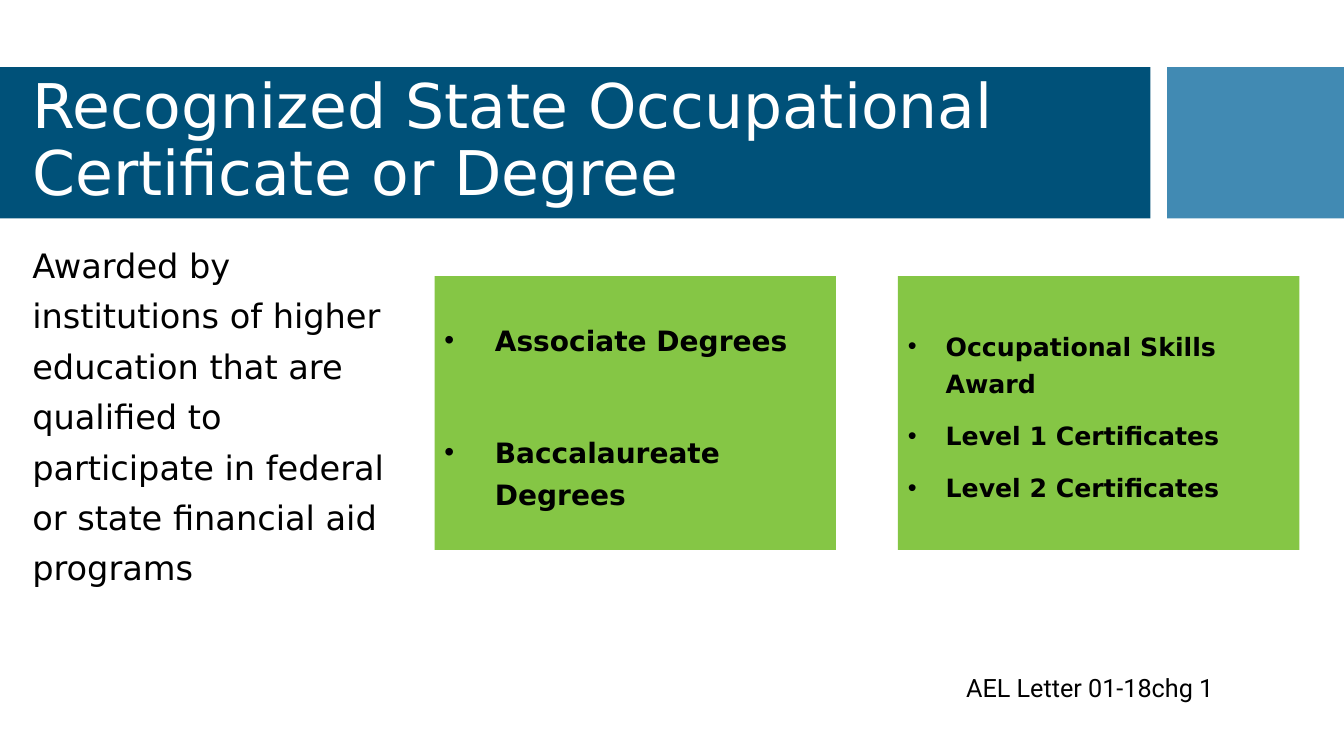
import pptx
import pptx.util
import pptx.dml.color
import pptx.enum.shapes
import pptx.enum.text
import pptx.oxml.ns
import lxml.etree

Pt = pptx.util.Pt
ANCHOR = pptx.enum.text.MSO_ANCHOR

COLORS = {"navy": "005179", "blue": "418AB3", "green": "85C645",
          "white": "FFFFFF", "black": "000000"}
FONT = "DejaVu Sans"

TITLE = "Recognized State Occupational Certificate or Degree"
INTRO = ("Awarded by institutions of higher education that are qualified "
         "to participate in federal or state financial aid programs")
LETTER = "AEL Letter 01-18chg 1"
CARDS = [
    {"items": ["Associate Degrees", "Baccalaureate Degrees"],
     "size": 20, "indent": 36, "gap": 50},
    {"items": ["Occupational Skills Award", "Level 1 Certificates",
               "Level 2 Certificates"],
     "size": 18, "indent": 27, "gap": 10},
]

SLIDE_W, SLIDE_H = 960, 540
BAND_Y, BAND_H = 48, 108
TITLE_BAND_W, BAND_GAP = 821.7, 12
CARD_X, CARD_Y, CARD_W, CARD_H, CARD_STEP = 310.4, 197.2, 286.8, 195.6, 331


def rgb(name):
    return pptx.dml.color.RGBColor.from_string(COLORS[name])


def add_rect(s, x, y, w, h, fill):
    sp = s.shapes.add_shape(pptx.enum.shapes.MSO_SHAPE.RECTANGLE,
                            Pt(x), Pt(y), Pt(w), Pt(h))
    sp.shadow.inherit = False
    sp.fill.solid()
    sp.fill.fore_color.rgb = rgb(fill)
    sp.line.fill.background()
    return sp


def add_bullet(p, indent):
    """Give the paragraph a round bullet with a hanging indent in points."""
    pPr = p._p.get_or_add_pPr()
    pPr.set("marL", str(Pt(indent)))
    pPr.set("indent", str(-Pt(indent)))
    for tag, key, value in (("a:buFont", "typeface", "Arial"),
                            ("a:buChar", "char", "•")):
        lxml.etree.SubElement(pPr, pptx.oxml.ns.qn(tag)).set(key, value)


def write(sp, lines, size, color="black", font=FONT, bold=False, spacing=1.0,
          gap=0, indent=0, anchor=ANCHOR.TOP, wrap=True):
    tf = sp.text_frame
    tf.word_wrap = wrap
    tf.vertical_anchor = anchor
    for i, line in enumerate(lines):
        p = tf.add_paragraph() if i else tf.paragraphs[0]
        if indent:
            add_bullet(p, indent)
        p.alignment = pptx.enum.text.PP_ALIGN.LEFT
        p.line_spacing = spacing
        if i:
            p.space_before = Pt(gap)
        r = p.add_run()
        r.text = line
        for name, value in {"name": font, "size": Pt(size), "bold": bold}.items():
            setattr(r.font, name, value)
        r.font.color.rgb = rgb(color)


def add_text(s, x, y, w, h, text, size, **style):
    sp = s.shapes.add_textbox(Pt(x), Pt(y), Pt(w), Pt(h))
    write(sp, [text], size, **style)
    return sp


prs = pptx.Presentation()
prs.slide_width, prs.slide_height = Pt(SLIDE_W), Pt(SLIDE_H)
s = prs.slides.add_slide(prs.slide_layouts[6])

accent_x = TITLE_BAND_W + BAND_GAP
add_rect(s, 0, BAND_Y, TITLE_BAND_W, BAND_H, "navy")
add_rect(s, accent_x, BAND_Y, SLIDE_W - accent_x, BAND_H, "blue")

add_text(s, 16, 59, 795, 85, TITLE, 44, color="white", spacing=0.9,
         anchor=ANCHOR.MIDDLE)
add_text(s, 16, 164.2, 278, 358.5, INTRO, 24, spacing=1.25)

for i, card in enumerate(CARDS):
    sp = add_rect(s, CARD_X + i * CARD_STEP, CARD_Y, CARD_W, CARD_H, "green")
    write(sp, card["items"], card["size"], bold=True, spacing=1.25,
          gap=card["gap"], indent=card["indent"], anchor=ANCHOR.MIDDLE)

letter = add_text(s, 683, 476.6, 193, 29, LETTER, 18, font="Roboto", wrap=False)
letter.text_frame.auto_size = pptx.enum.text.MSO_AUTO_SIZE.SHAPE_TO_FIT_TEXT

prs.save("out.pptx")
